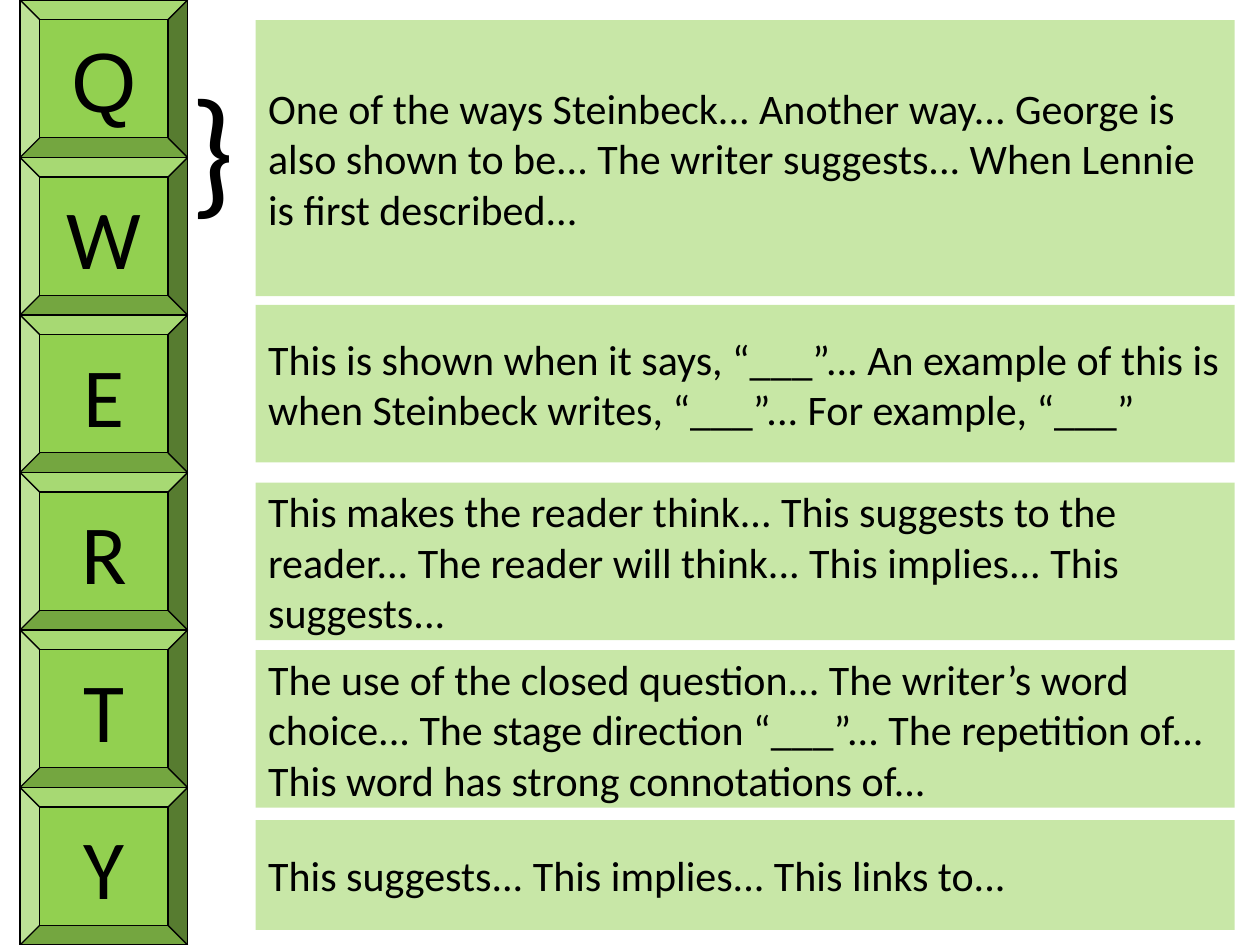
from pptx import Presentation
from pptx.dml.color import RGBColor
from pptx.enum.shapes import MSO_SHAPE
from pptx.enum.text import MSO_ANCHOR, PP_ALIGN
from pptx.util import Inches, Pt
from lxml import etree

RECT, BEVEL = MSO_SHAPE.RECTANGLE, MSO_SHAPE.BEVEL
LEFT, CENTER = PP_ALIGN.LEFT, PP_ALIGN.CENTER
TOP, MIDDLE = MSO_ANCHOR.TOP, MSO_ANCHOR.MIDDLE

# Content: key letters with their fonts, then prompts with top and height
KEYS = [("Q", "Arial")] + [(letter, "Calibri") for letter in "WERTY"]
PROMPTS = [
    (0.16, 2.19, 50, "One of the ways Steinbeck... Another way... George is also "
     "shown to be... The writer suggests... When Lennie is first described..."),
    (2.42, 1.25, 51, "This is shown when it says, “___”... An example of this is "
     "when Steinbeck writes, “___”... For example, “___”"),
    (3.83, 1.25, 50, "This makes the reader think... This suggests to the reader... "
     "The reader will think... This implies... This suggests..."),
    (5.16, 1.25, 50, "The use of the closed question... The writer’s word choice... "
     "The stage direction “___”... The repetition of... "
     "This word has strong connotations of..."),
    (6.51, 0.87, 50, "This suggests... This implies... This links to..."),
]

THEME = {
    "green": RGBColor(0x92, 0xD0, 0x50),
    "black": RGBColor(0, 0, 0),
    "font": "Calibri",
    "key": Pt(48),
    "brace": Pt(80),
    "body": Pt(24),
    "line": Pt(0.75),
}
WIDE, HIGH = 10, 7.5
KEY_X, KEY_W = 0.16, 1.33
KEY_H = HIGH / len(KEYS)
BOX_X, BOX_W = 2.03, 7.77


def write(shape, text, size, font=THEME["font"], align=LEFT, anchor=MIDDLE):
    frame = shape.text_frame
    frame.word_wrap = True
    frame.vertical_anchor = anchor
    para = frame.paragraphs[0]
    para.text = text
    para.alignment = align
    para.font.name = font
    para.font.size = size
    para.font.color.rgb = THEME["black"]


def add_box(slide, kind, x, y, w, h):
    box = slide.shapes.add_shape(kind, Inches(x), Inches(y), Inches(w), Inches(h))
    box.shadow.inherit = False
    box.fill.solid()
    box.fill.fore_color.rgb = THEME["green"]
    return box


def fade(shape, percent):
    color = shape.fill._xPr.find(".//{*}srgbClr")
    tag = etree.QName(color).namespace
    etree.SubElement(color, f"{{{tag}}}alpha", val=str(percent * 1000))


def main():
    deck = Presentation()
    deck.slide_width, deck.slide_height = Inches(WIDE), Inches(HIGH)
    slide = deck.slides.add_slide(deck.slide_layouts[6])

    # Column of keys
    for row, (letter, font) in enumerate(KEYS):
        key = add_box(slide, BEVEL, KEY_X, row * KEY_H, KEY_W, KEY_H)
        key.line.color.rgb = THEME["black"]
        key.line.width = THEME["line"]
        write(key, letter, THEME["key"], font, CENTER)

    # Brace joining the first two keys
    brace = slide.shapes.add_textbox(Inches(1.41), Inches(0.43),
                                     Inches(0.55), Inches(1.45))
    write(brace, "}", THEME["brace"], anchor=TOP)

    # Sentence starters
    for top, height, alpha, text in PROMPTS:
        box = add_box(slide, RECT, BOX_X, top, BOX_W, height)
        box.line.fill.background()
        fade(box, alpha)
        write(box, text, THEME["body"])

    deck.save("out.pptx")


if __name__ == "__main__":
    main()
